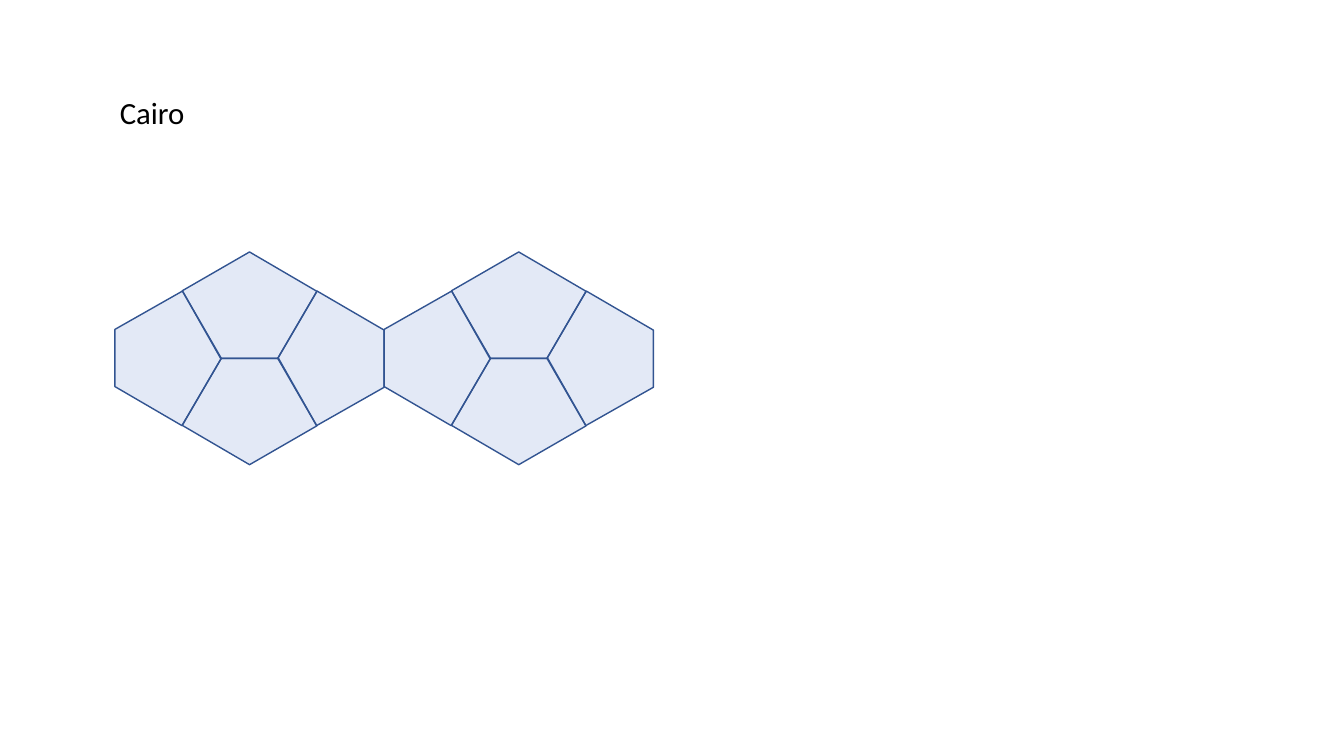
from dataclasses import dataclass
from lxml import etree
from pptx import Presentation, util as u
from pptx.dml.color import RGBColor
from pptx.enum import text
from pptx.oxml.ns import qn


@dataclass(frozen=True)
class Theme:
    fill: str = "4472C4"
    alpha: int = 15
    edge: str = "325491"
    width: float = 1
    ink: str = "000000"
    font: str = "Calibri"
    size: int = 22


THEME = Theme()
WIDE, HIGH = 13.33, 7.5
PENT = [(0.5, 0), (1, 0.37), (0.71, 1), (0.285, 1), (0, 0.365)]
TURNS = [(0, 0, -1), (180, 0, 1), (270, 1, 0), (90, -1, 0)]


def apply(item, values):
    for name, value in values.items():
        setattr(item, name, value)


def title(slide, box, words):
    frame = slide.shapes.add_textbox(*map(u.Inches, box)).text_frame
    apply(frame, {"word_wrap": False, "auto_size": text.MSO_AUTO_SIZE.SHAPE_TO_FIT_TEXT})
    run = frame.paragraphs[0].add_run()
    run.text = words
    apply(run.font, {"name": THEME.font, "size": u.Pt(THEME.size)})
    run.font.color.rgb = RGBColor.from_string(THEME.ink)


def pentagon(group, box, turn):
    left, top, wide, high = box
    points = [(u.Inches(left + x * wide), u.Inches(top + y * high)) for x, y in PENT]
    pen = group.shapes.build_freeform(*points[0])
    pen.add_line_segments(points[1:], close=True)
    shape = pen.convert_to_shape()
    apply(shape, {"rotation": turn})
    shape.shadow.inherit = False
    shape.fill.solid()
    shape.fill.fore_color.rgb = RGBColor.from_string(THEME.fill)
    tint = shape._element.spPr.find(qn("a:solidFill"))[0]
    etree.SubElement(tint, qn("a:alpha"), val=str(THEME.alpha * 1000))
    shape.line.color.rgb = RGBColor.from_string(THEME.edge)
    shape.line.width = u.Pt(THEME.width)


def tile(slide, box):
    left, top, wide, high = box
    side, tall = wide / 2, high / 2
    midx, midy = left + wide / 2, top + high / 2
    reach = (wide - tall) / 2
    group = slide.shapes.add_group_shape()
    for turn, across, down in TURNS:
        x = midx + across * reach - side / 2
        y = midy + down * tall / 2 - tall / 2
        pentagon(group, (x, y, side, tall), turn)


def main():
    deck = Presentation()
    apply(deck, {"slide_width": u.Inches(WIDE), "slide_height": u.Inches(HIGH)})
    slide = deck.slides.add_slide(deck.slide_layouts[6])
    left, top, wide, high = 1.14, 2.5, 2.67, 2.11
    for col in (1, 0):
        tile(slide, (left + col * wide, top, wide, high))
    title(slide, (1.09, 0.88, 0.85, 0.47), "Cairo")
    deck.save("out.pptx")


if __name__ == "__main__":
    main()
